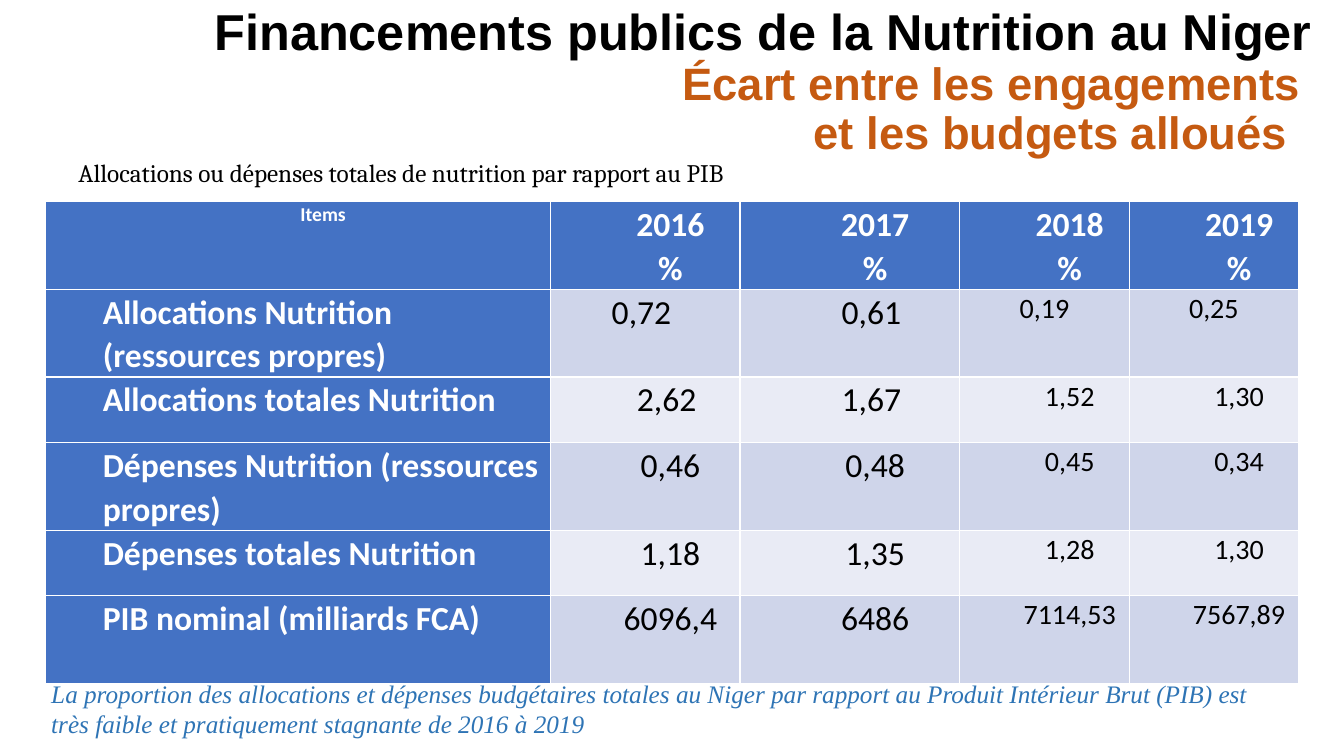
from pptx import Presentation
from pptx.dml.color import RGBColor
from pptx.enum.text import MSO_ANCHOR, PP_ALIGN
from pptx.oxml.ns import qn
from pptx.util import Inches, Pt
from lxml.etree import SubElement

COLORS = {
    "black": "000000", "white": "FFFFFF", "orange": "C55A11", "note": "2E74B5",
    "header": "4472C4", "odd": "CFD5EA", "even": "E9EBF5",
}
COL_WIDTHS = [5.01, 1.88, 2.18, 1.68, 1.68]
ROW_HEIGHTS = [0.86, 0.87, 0.65, 0.87, 0.65, 0.87]
ROWS = [
    ["Items", "2016\n%", "2017\n%", "2018\n%", "2019\n%"],
    ["Allocations Nutrition (ressources propres)", "0,72 ", "0,61 ", "0,19", "0,25"],
    ["Allocations totales Nutrition", "2,62 ", "1,67 ", "1,52", "1,30"],
    ["Dépenses Nutrition (ressources propres)", "0,46", "0,48", "0,45", "0,34"],
    ["Dépenses totales Nutrition", "1,18", "1,35", "1,28", "1,30"],
    ["PIB nominal (milliards FCA)", "6096,4", "6486", "7114,53", "7567,89"],
]
UNINDENTED = {(1, 1), (1, 3), (1, 4)}


def style_runs(p, font, size, color, bold=False, italic=False):
    for r in p.runs:
        r.font.name = font
        r.font.size = Pt(size)
        r.font.bold = bold
        r.font.italic = italic
        r.font.color.rgb = RGBColor.from_string(COLORS[color])


def add_caption(box, text, font, color, italic=False):
    """Add a wrapped text box of 18 points and return its paragraph."""
    tf = s.shapes.add_textbox(*[Inches(v) for v in box]).text_frame
    tf.word_wrap = True
    p = tf.paragraphs[0]
    p.text = text
    style_runs(p, font, 18, color, italic=italic)
    return p


prs = Presentation()
prs.slide_width, prs.slide_height = Inches(13.33), Inches(7.5)
s = prs.slides.add_slide(prs.slide_layouts[5])

# Title: one paragraph with line breaks
title = s.shapes.title
title.left, title.top = Inches(0.43), Inches(0.2)
title.width, title.height = Inches(12.69), Inches(1.8)
tf = title.text_frame
tf.word_wrap = True
tf.vertical_anchor = MSO_ANCHOR.MIDDLE
tf.margin_bottom = Inches(0.6)
p = tf.paragraphs[0]
p.text = ("Financements publics de la Nutrition au Niger\v"
          "Écart entre les engagements \vet les budgets alloués  ")
p.alignment = PP_ALIGN.RIGHT
p.line_spacing = 0.9
style_runs(p, "Arial", 32.4, "orange", bold=True)
heading = p.runs[0].font
heading.size = Pt(36)
heading.color.rgb = RGBColor.from_string(COLORS["black"])
for br, size in zip(p._p.findall(qn("a:br")), (3600, 3240)):
    SubElement(br, qn("a:rPr"), sz=str(size))

# Table
table = s.shapes.add_table(
    len(ROWS), len(COL_WIDTHS), Inches(0.45), Inches(2),
    Inches(sum(COL_WIDTHS)), Inches(sum(ROW_HEIGHTS))).table
for column, width in zip(table.columns, COL_WIDTHS):
    column.width = Inches(width)
for row, height in zip(table.rows, ROW_HEIGHTS):
    row.height = Inches(height)

for i, values in enumerate(ROWS):
    for j, value in enumerate(values):
        cell = table.cell(i, j)
        is_header = i == 0 or j == 0
        fill = "header" if is_header else "odd" if i % 2 else "even"
        cell.fill.solid()
        cell.fill.fore_color.rgb = RGBColor.from_string(COLORS[fill])
        cell.margin_left = cell.margin_right = Inches(0.07)
        cell.margin_top = cell.margin_bottom = 0
        if i == j == 0:
            size = 14
        else:
            size = 24 if is_header or j < 3 else 20
        cell.text_frame.text = value
        for p in cell.text_frame.paragraphs:
            p.alignment = PP_ALIGN.LEFT if j == 0 and i else PP_ALIGN.CENTER
            p.line_spacing = 1.07
            if (i, j) not in UNINDENTED:
                p._p.get_or_add_pPr().set("marL", str(Inches(0.5)))
            style_runs(p, "Calibri", size, "white" if is_header else "black", bold=is_header)

# Captions above and below the table
p = add_caption((0.43, 1.49, 7.83, 0.41),
                "Allocations ou dépenses totales de nutrition par rapport au PIB",
                "Cambria", "black")
p.line_spacing = 1.07
p._p.get_or_add_pPr().set("marL", str(Inches(0.25)))
add_caption((0.41, 6.68, 12.42, 0.71),
            "La proportion des allocations et dépenses budgétaires totales au Niger par "
            "rapport au Produit Intérieur Brut (PIB) est très faible et pratiquement "
            "stagnante de 2016 à 2019",
            "Times New Roman", "note", italic=True)

prs.save("out.pptx")
